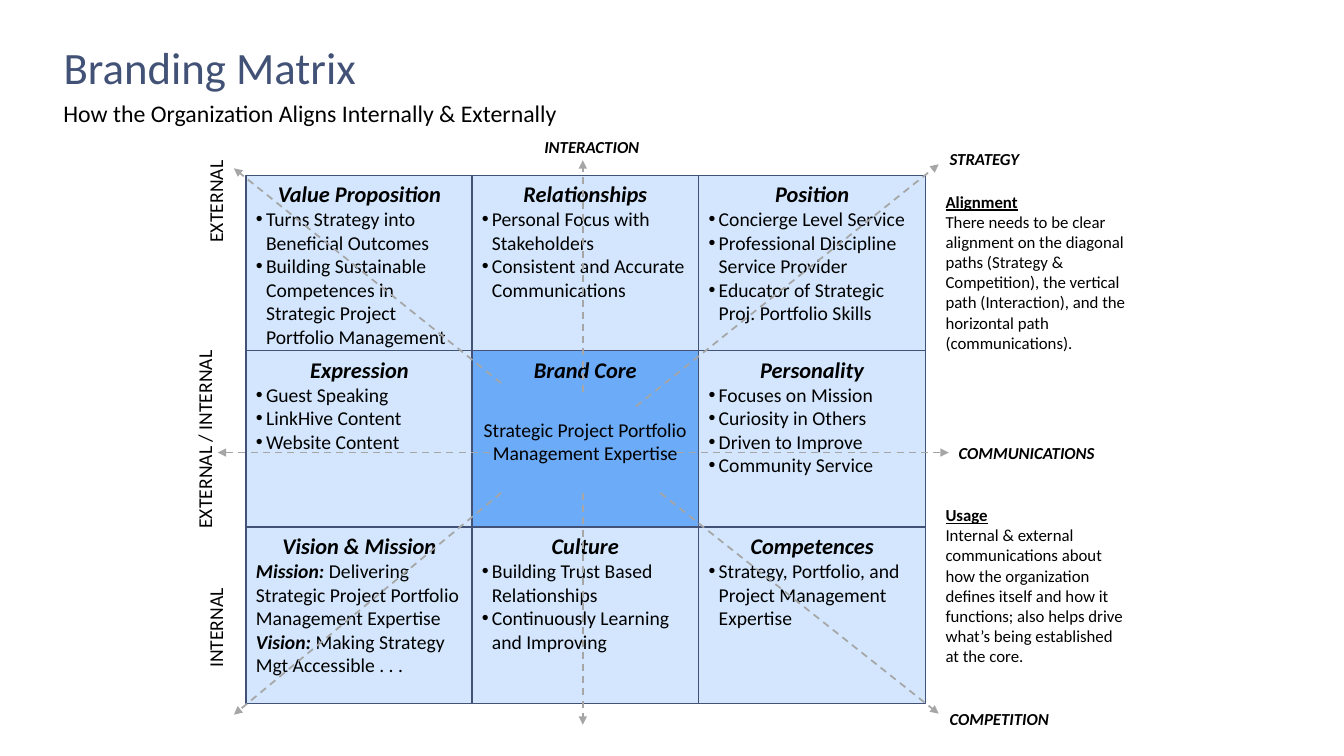
"""Build the Branding Matrix slide."""
import pptx
import pptx.dml.color
import pptx.enum.dml
import pptx.enum.shapes
import pptx.enum.text
import pptx.oxml
import pptx.oxml.ns
import pptx.util

HUES = {"title": "425176", "text": "000000", "cell": "D3E6FD",
        "core": "6CABF8", "edge": "425176", "axis": "A6A6A6"}
ALIGN = pptx.enum.text.PP_ALIGN
LEFT, MID = ALIGN.LEFT, ALIGN.CENTER
ANCHOR = pptx.enum.text.MSO_ANCHOR
FIT = pptx.enum.text.MSO_AUTO_SIZE
QN = pptx.oxml.ns.qn


class Board:
    """Hold the style and the current slide, and draw each kind of element."""

    def __init__(self, deck):
        self.face = "Calibri"
        self.slide = deck.slides.add_slide(deck.slide_layouts[5])
        self.shapes = self.slide.shapes

    def px(self, *nums):
        return [pptx.util.Emu(n * 9144) for n in nums]

    def hue(self, name):
        return pptx.dml.color.RGBColor.from_string(HUES[name])

    def style(self, para, size, align=LEFT, hue="text", bold=False,
              slant=False, under=False):
        para.alignment = align
        font = para.font
        font.name, font.size = self.face, pptx.util.Pt(size)
        font.bold, font.italic, font.underline = bold, slant, under
        font.color.rgb = self.hue(hue)

    def next(self, frame, text):
        para = frame.add_paragraph()
        para.text = text
        return para

    def dot(self, para):
        props = para._p.get_or_add_pPr()
        props.set("marL", "91440")
        props.set("indent", "-91440")
        for tag, key, val in (("buFont", "typeface", "Arial"), ("buChar", "char", "•")):
            pptx.oxml.ns.qn(f"a:{tag}")
            node = props.makeelement(QN(f"a:{tag}"), {key: val})
            props.append(node)

    def title(self, text, box):
        shape = self.shapes.title
        shape.left, shape.top, shape.width, shape.height = self.px(*box)
        frame = shape.text_frame
        frame.text = text
        frame.auto_size = FIT.NONE
        frame.vertical_anchor = ANCHOR.BOTTOM
        self.style(frame.paragraphs[0], 32, hue="title")

    def label(self, text, box, size=12, wrap=True, turn=0, **look):
        shape = self.shapes.add_textbox(*self.px(*box))
        shape.rotation = turn
        frame = shape.text_frame
        frame.text = text
        frame.word_wrap = wrap
        frame.auto_size = FIT.SHAPE_TO_FIT_TEXT
        self.style(frame.paragraphs[0], size, **look)
        return frame

    def note(self, head, body, box):
        frame = self.label(head, box, bold=True, under=True)
        self.style(self.next(frame, body), 12)

    def cell(self, box, head, kind, lines):
        kinds = pptx.enum.shapes.MSO_SHAPE
        shape = self.shapes.add_shape(kinds.RECTANGLE, *self.px(*box))
        shape.shadow.inherit = False
        shape.fill.solid()
        shape.fill.fore_color.rgb = self.hue("core" if kind == "core" else "cell")
        shape.line.color.rgb = self.hue("edge")
        shape.line.width = pptx.util.Pt(1)
        frame = shape.text_frame
        frame.word_wrap = True
        frame.vertical_anchor = ANCHOR.TOP
        frame.text = head
        self.style(frame.paragraphs[0], 16, MID, bold=True, slant=True)
        for line in lines:
            if kind == "lead":
                para = self.next(frame, "")
                lead, body = line
                run = para.add_run()
                run.text = lead
                run.font.bold = run.font.italic = True
                para.add_run().text = body
            else:
                para = self.next(frame, line)
            if kind == "list":
                self.dot(para)
            if kind == "core":
                para.space_before = pptx.util.Pt(25)
            self.style(para, 14, MID if kind == "core" else LEFT)

    def arrow(self, *ends):
        kind = pptx.enum.shapes.MSO_CONNECTOR.STRAIGHT
        link = self.shapes.add_connector(kind, *self.px(*ends))
        link.line.color.rgb = self.hue("axis")
        link.line.width = pptx.util.Pt(1.25)
        link.line.dash_style = pptx.enum.dml.MSO_LINE.DASH
        props = link.element.spPr
        line = props.find(QN("a:ln"))
        line.append(line.makeelement(QN("a:tailEnd"), {"type": "triangle"}))
        props.append(props.makeelement(QN("a:effectLst"), {}))


CELLS = [
    ("Value Proposition", "list",
     ["Turns Strategy into Beneficial Outcomes",
      "Building Sustainable Competences in Strategic Project Portfolio Management"]),
    ("Relationships", "list",
     ["Personal Focus with Stakeholders", "Consistent and Accurate Communications"]),
    ("Position", "list",
     ["Concierge Level Service", "Professional Discipline Service Provider",
      "Educator of Strategic Proj. Portfolio Skills"]),
    ("Expression", "list", ["Guest Speaking", "LinkHive Content", "Website Content"]),
    ("Brand Core", "core", ["Strategic Project Portfolio Management Expertise"]),
    ("Personality", "list",
     ["Focuses on Mission", "Curiosity in Others", "Driven to Improve",
      "Community Service"]),
    ("Vision & Mission", "lead",
     [("Mission: ", "Delivering Strategic Project Portfolio Management Expertise"),
      ("Vision: ", "Making Strategy Mgt Accessible . . .")]),
    ("Culture", "list",
     ["Building Trust Based Relationships", "Continuously Learning and Improving"]),
    ("Competences", "list", ["Strategy, Portfolio, and Project Management Expertise"]),
]
SIDES = [("EXTERNAL", (152, 185, 120, 30)), ("INTERNAL", (152, 608, 120, 30)),
         ("EXTERNAL / INTERNAL", (101, 421, 200, 30))]
ARROWS = [(497, 489, 232, 709), (631, 403, 931, 163), (497, 380, 232, 167),
          (655, 489, 931, 708), (486, 449, 216, 449), (671, 449, 941, 449),
          (578, 389, 578, 159), (578, 489, 578, 719)]
AXES = [("STRATEGY", (932, 143, 90, 30), LEFT),
        ("COMPETITION", (932, 698, 121, 30), LEFT),
        ("INTERACTION", (529, 131, 116, 30), MID),
        ("COMMUNICATIONS", (941, 434, 158, 30), LEFT)]
NOTES = [
    ("Alignment", "There needs to be clear alignment on the diagonal paths "
     "(Strategy & Competition), the vertical path (Interaction), and the "
     "horizontal path (communications).", (928, 185, 200, 180)),
    ("Usage", "Internal & external communications about how the organization "
     "defines itself and how it functions; also helps drive what’s being "
     "established at the core.", (928, 496, 200, 170)),
]


def main():
    deck = pptx.Presentation()
    deck.slide_width = pptx.util.Inches(13.33)
    deck.slide_height = pptx.util.Inches(7.5)
    board = Board(deck)
    board.title("Branding Matrix", (53, 32, 1226, 66))
    lead = board.label("How the Organization Aligns Internally & Externally",
                       (53, 90, 1227, 41), 17)
    lead.auto_size = FIT.NONE
    lead.paragraphs[0].line_spacing = 1.1
    for i, (head, kind, lines) in enumerate(CELLS):
        row, col = divmod(i, 3)
        box = (244 + col * 449 // 2, 174 + row * 349 // 2, 225, 175)
        board.cell(box, head, kind, lines)
    for text, box in SIDES:
        board.label(text, box, 14, turn=270, align=MID)
    for ends in ARROWS:
        board.arrow(*ends)
    for text, box, align in AXES:
        board.label(text, box, wrap=False, align=align, bold=True, slant=True)
    for head, body, box in NOTES:
        board.note(head, body, box)
    deck.save("out.pptx")


if __name__ == "__main__":
    main()
